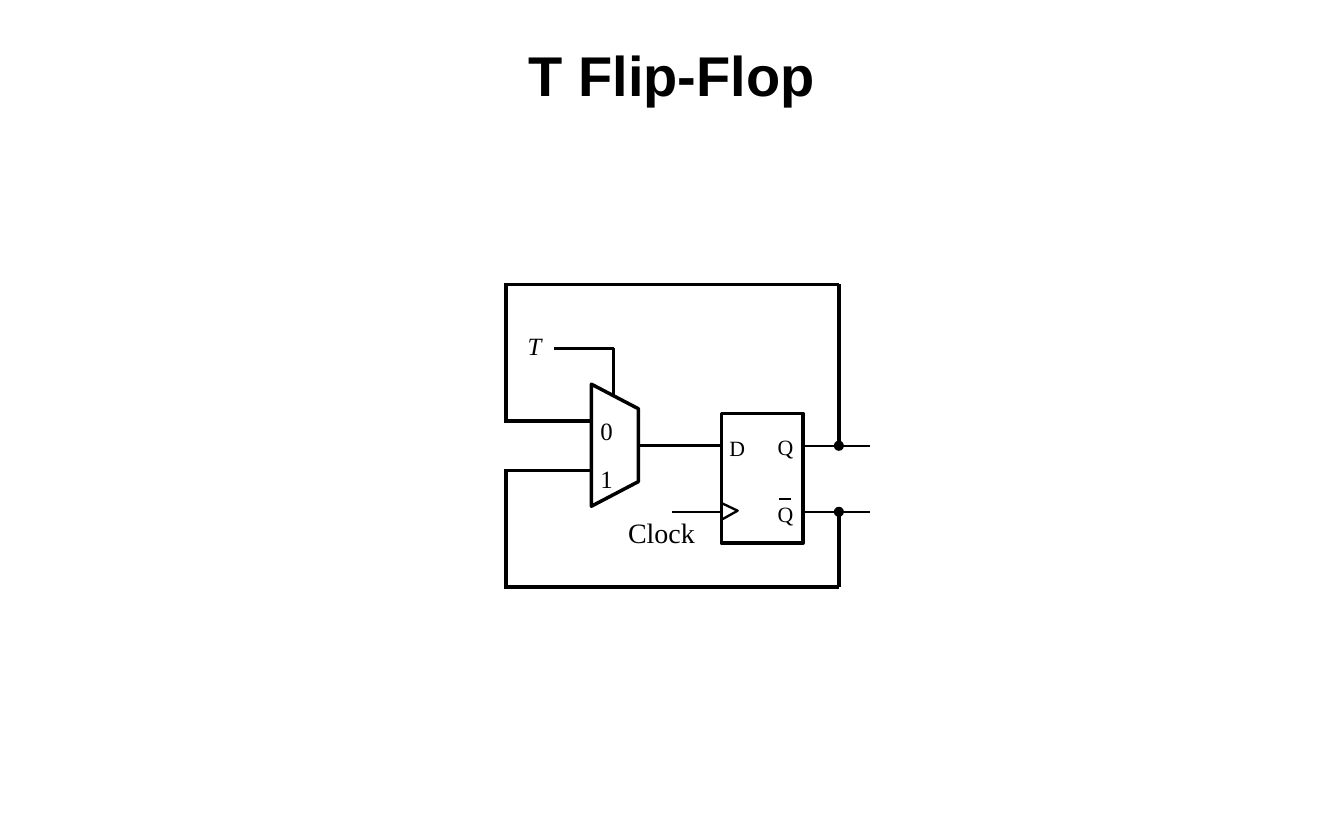
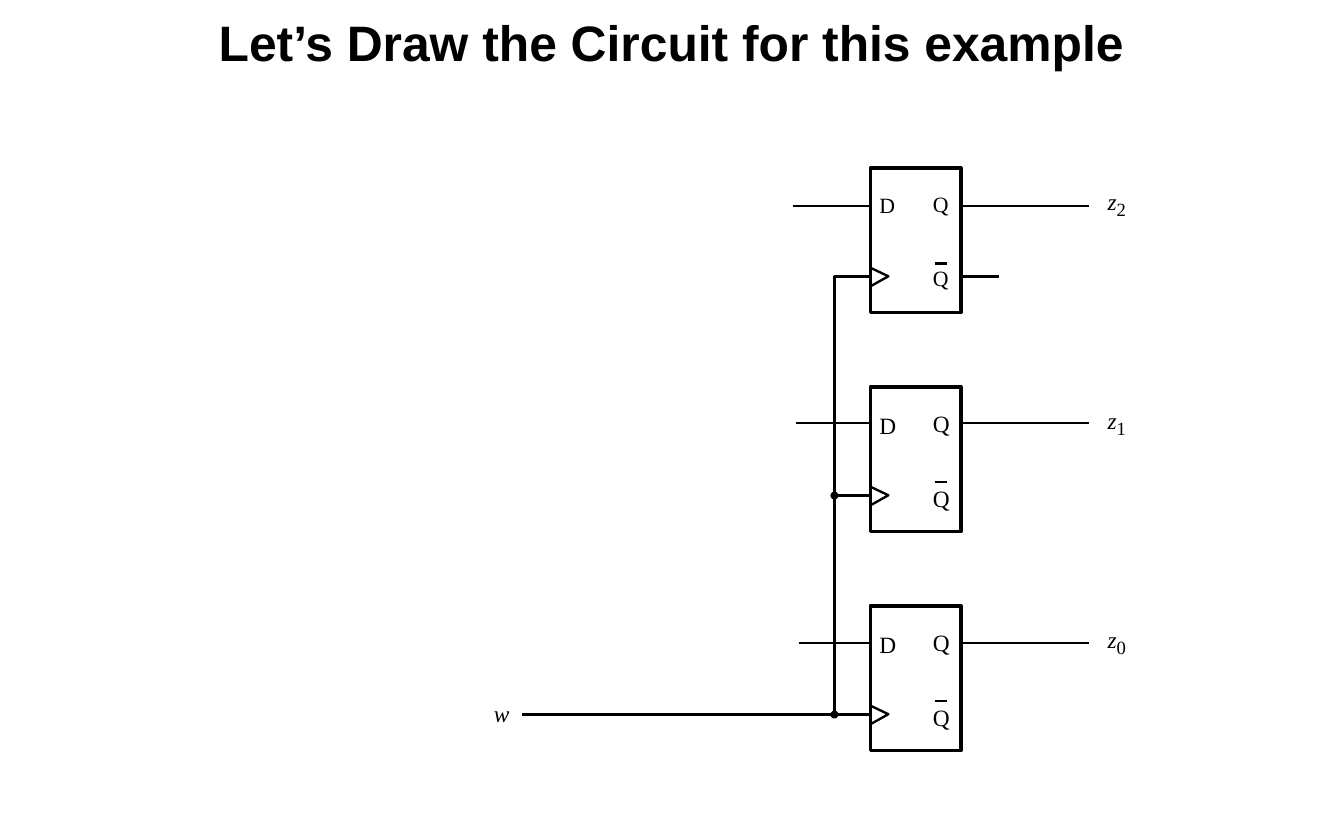
import pptx
import pptx.dml.color
import pptx.enum.shapes
import pptx.enum.text
import pptx.oxml
import pptx.util

Inches = pptx.util.Inches
Pt = pptx.util.Pt

COLORS = {"ink": "000000", "paper": "FFFFFF"}
TITLE_FONT = "Arial"
LABEL_FONT = "Times New Roman"
THICK, THIN = 2.25, 1.5
LABEL_SIZES = {12: (0.13, 0.2), 14: (0.19, 0.24), 15: (0.21, 0.25), 16: (0.18, 0.27)}


def color(name):
    return pptx.dml.color.RGBColor.from_string(COLORS[name])


def style_line(shape, weight):
    shape.line.color.rgb = color("ink")
    shape.line.width = Pt(weight)


def add_run(paragraph, text, size, font=LABEL_FONT, bold=False, italic=False):
    run = paragraph.add_run()
    run.text = text
    run.font.name = font
    run.font.size = Pt(size)
    run.font.bold = bold
    run.font.italic = italic
    run.font.color.rgb = color("ink")


def add_title(slide, text, top, height, size):
    box = slide.shapes.add_textbox(Inches(1), Inches(top), Inches(10), Inches(height))
    frame = box.text_frame
    frame.word_wrap = True
    frame.vertical_anchor = pptx.enum.text.MSO_ANCHOR.MIDDLE
    paragraph = frame.paragraphs[0]
    paragraph.alignment = pptx.enum.text.PP_ALIGN.CENTER
    add_run(paragraph, text, size, TITLE_FONT, bold=True)


def add_label(slide, text, left, top, size, italic=False):
    width, height = LABEL_SIZES[size]
    if text == "z":
        width = 0.15
    box = slide.shapes.add_textbox(Inches(left), Inches(top), Inches(width), Inches(height))
    frame = box.text_frame
    frame.margin_left = frame.margin_right = frame.margin_top = frame.margin_bottom = 0
    frame.word_wrap = False
    frame.auto_size = pptx.enum.text.MSO_AUTO_SIZE.SHAPE_TO_FIT_TEXT
    add_run(frame.paragraphs[0], text, size, italic=italic)


def add_wire(slide, start, end, weight=THIN):
    wire = slide.shapes.add_connector(
        pptx.enum.shapes.MSO_CONNECTOR.STRAIGHT, *map(Inches, (*start, *end)))
    style_line(wire, weight)
    wire._element.spPr.append(pptx.oxml.parse_xml(
        '<a:effectLst xmlns:a="http://schemas.openxmlformats.org/drawingml/2006/main"/>'))


def add_outline(slide, points, weight=THIN, close=False):
    corners = [(Inches(x), Inches(y)) for x, y in points]
    builder = slide.shapes.build_freeform(*corners[0])
    builder.add_line_segments(corners[1:], close=close)
    outline = builder.convert_to_shape()
    outline.shadow.inherit = False
    outline.fill.background()
    style_line(outline, weight)


def add_solid(slide, kind, left, top, width, height, fill, weight):
    solid = slide.shapes.add_shape(kind, *map(Inches, (left, top, width, height)))
    solid.shadow.inherit = False
    solid.fill.solid()
    solid.fill.fore_color.rgb = color(fill)
    style_line(solid, weight)


def add_junction(slide, x, y, diameter, weight):
    add_solid(slide, pptx.enum.shapes.MSO_SHAPE.OVAL, x - diameter / 2, y - diameter / 2,
              diameter, diameter, "ink", weight)


def draw_flip_flop(slide, left, top, width, height, size):
    """Draw a D flip-flop; its pins sit at fixed shares of the box."""
    def at(across, down):
        return left + across * width, top + down * height

    add_solid(slide, pptx.enum.shapes.MSO_SHAPE.RECTANGLE, left, top, width, height,
              "paper", THICK)
    for text, across, down in (("D", 0.1, 0.165), ("Q", 0.69, 0.155), ("Q", 0.69, 0.67)):
        add_label(slide, text, *at(across, down), size)
    add_wire(slide, at(0.71, 0.66), at(0.85, 0.66))
    add_outline(slide, [at(0, 0.82), at(0.2, 0.75), at(0, 0.69)])


def draw_multiplexer(slide, left, top, width, height):
    right, bottom, slant = left + width, top + height, 0.22
    add_outline(slide, [(left, top), (right, top + slant), (right, bottom - slant),
                        (left, bottom)], THICK, close=True)
    for digit, down in (("0", 0.28), ("1", 0.71)):
        add_label(slide, digit, left + 0.08, top + down, 16)


def draw_t_flip_flop(slide, left, top, width, height):
    """Draw a D flip-flop whose outputs feed back through a multiplexer."""
    right, bottom = left + width, top + height
    mux_left, mux_right, select = left + 0.76, left + 1.18, left + 0.96
    flip_left, flip_right = left + 1.92, left + 2.65
    output, inverse = top + 1.44, top + 2.03

    for loop_end, mux_input, pin in ((top, top + 1.22, output),
                                     (bottom, top + 1.66, inverse)):
        for start, end in (((right, pin), (right, loop_end)),
                           ((right, loop_end), (left - 0.02, loop_end)),
                           ((left, loop_end), (left, mux_input)),
                           ((left - 0.02, mux_input), (mux_left, mux_input))):
            add_wire(slide, start, end, THICK)
    add_wire(slide, (mux_right, output), (flip_left, output), THICK)
    draw_multiplexer(slide, mux_left, top + 0.89, mux_right - mux_left, 1.09)
    add_wire(slide, (left + 0.43, top + 0.57), (select, top + 0.57), THICK)
    add_wire(slide, (select, top + 0.57), (select, top + 0.99), THICK)
    add_label(slide, "T", left + 0.19, top + 0.41, 16, italic=True)

    draw_flip_flop(slide, flip_left, top + 1.15, flip_right - flip_left, 1.16, 14)
    add_wire(slide, (left + 1.48, inverse), (flip_left, inverse))
    for pin in (output, inverse):
        add_wire(slide, (flip_right, pin), (right + 0.28, pin))
        add_junction(slide, right, pin, 0.08, 0.75)

    clock = slide.shapes.add_textbox(
        Inches(left + 0.99), Inches(top + 2.01), Inches(0.8), Inches(0.4))
    clock.text_frame.word_wrap = False
    clock.text_frame.auto_size = pptx.enum.text.MSO_AUTO_SIZE.SHAPE_TO_FIT_TEXT
    add_run(clock.text_frame.paragraphs[0], "Clock", 18)


def draw_register(slide, left, top, width, height):
    """Draw three flip-flops, one below the other, on the shared input w."""
    flip_left, flip_width, flip_height = left + 3.36, 0.81, 1.29
    flip_right = flip_left + flip_width
    pitch = (height - flip_height) / 2
    bus, clock_offset = left + 3.04, 0.97
    bottom_clock = top + 2 * pitch + clock_offset
    rows = (("2", 14, 2.67, 0.34), ("1", 15, 2.7, 0.32), ("0", 15, 2.72, 0.33))

    for index, (digit, size, input_start, data_offset) in enumerate(rows):
        row_top = top + index * pitch
        data, clock = row_top + data_offset, row_top + clock_offset
        draw_flip_flop(slide, flip_left, row_top, flip_width, flip_height, size)
        add_wire(slide, (left + input_start, data), (flip_left, data))
        add_wire(slide, (flip_right, data), (left + 5.31, data))
        add_label(slide, "z", left + width - 0.21, row_top + 0.17, 15, italic=True)
        add_label(slide, digit, left + width - 0.13, row_top + 0.27, 12)
        if index:
            add_wire(slide, (bus, clock), (flip_left, clock))
            add_junction(slide, bus, clock, 0.05, THIN)

    first_clock = top + clock_offset
    add_wire(slide, (flip_right, first_clock), (flip_right + 0.34, first_clock))
    add_outline(slide, [(bus, bottom_clock), (bus, first_clock), (flip_left, first_clock)])
    add_wire(slide, (left + 0.25, bottom_clock), (bus, bottom_clock))
    add_label(slide, "w", left, bottom_clock - 0.14, 15, italic=True)


def main():
    presentation = pptx.Presentation()
    presentation.slide_width, presentation.slide_height = Inches(12), Inches(7.5)
    blank = presentation.slide_layouts[6]

    slide = presentation.slides.add_slide(blank)
    draw_t_flip_flop(slide, 4.52, 2.54, 2.97, 2.7)
    add_title(slide, "T Flip-Flop", 0.33, 0.67, 36)

    slide = presentation.slides.add_slide(blank)
    add_title(slide, "Let’s Draw the Circuit for this example", 0, 0.75, 32)
    draw_register(slide, 4.41, 1.5, 5.69, 5.2)

    presentation.save("out.pptx")


if __name__ == "__main__":
    main()
